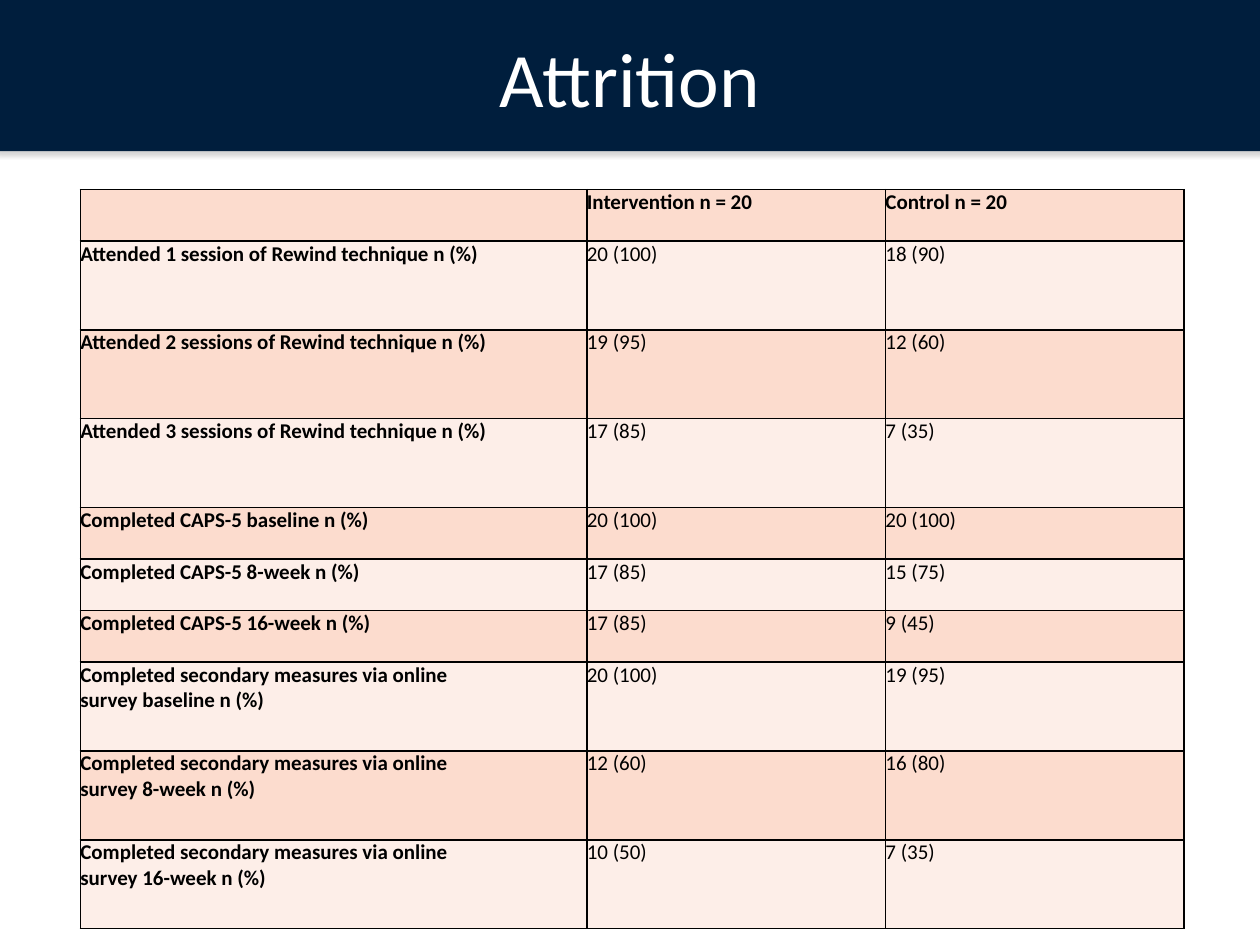
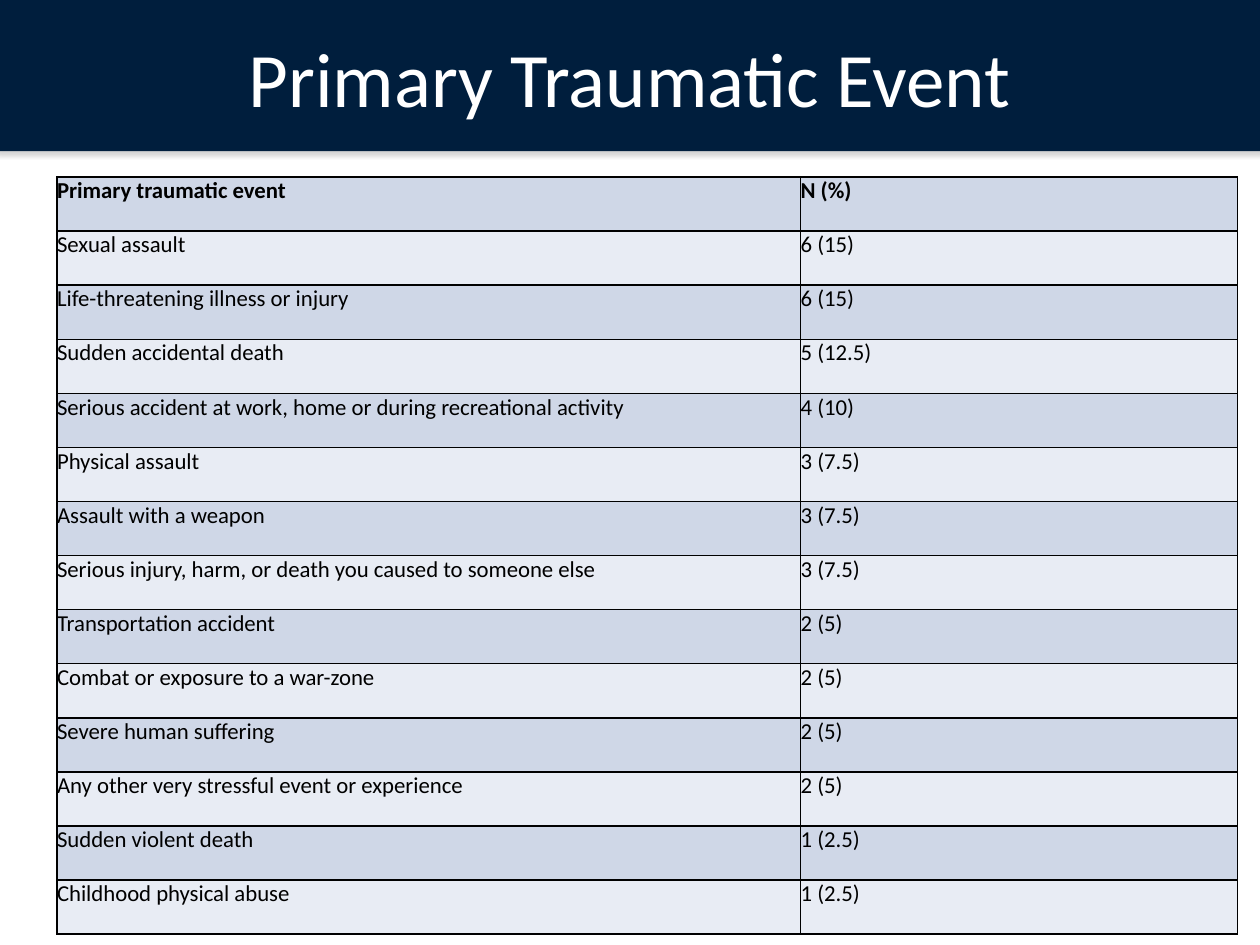
from lxml import etree
from pptx import Presentation
from pptx.dml.color import RGBColor
from pptx.enum import shapes, text
from pptx.oxml import parse_xml
from pptx.oxml.ns import nsdecls, qn
from pptx.util import Cm, Pt

NAVY = RGBColor(0x00, 0x1E, 0x3D)
WHITE = RGBColor(0xFF, 0xFF, 0xFF)
BLACK = RGBColor(0x00, 0x00, 0x00)
PEACH_BANDS = (RGBColor(0xFC, 0xDC, 0xCE), RGBColor(0xFD, 0xEE, 0xE8))
BLUE_BANDS = (RGBColor(0xCF, 0xD7, 0xE7), RGBColor(0xE8, 0xEC, 0xF4))
FONT = "Calibri"
SHORT_ROW, TALL_ROW = Cm(1.04), Cm(1.79)
EVENT_ROW = Cm(1.09)
LABEL_MARGIN = Cm(1.85)

ATTRITION = [
    ("", "Intervention n = 20", "Control n = 20"),
    ("Attended 1 session of Rewind technique n (%)", "20 (100)", "18 (90)"),
    ("Attended 2 sessions of Rewind technique n (%)", "19 (95)", "12 (60)"),
    ("Attended 3 sessions of Rewind technique n (%)", "17 (85)", "7 (35)"),
    ("Completed CAPS-5 baseline n (%)", "20 (100)", "20 (100)"),
    ("Completed CAPS-5 8-week n (%)", "17 (85)", "15 (75)"),
    ("Completed CAPS-5 16-week n (%)", "17 (85)", "9 (45)"),
    ("Completed secondary measures via online survey baseline n (%)", "20 (100)", "19 (95)"),
    ("Completed secondary measures via online survey 8-week n (%)", "12 (60)", "16 (80)"),
    ("Completed secondary measures via online survey 16-week n (%)", "10 (50)", "7 (35)"),
]

EVENTS = [
    ("Primary traumatic event", "N (%)"),
    ("Sexual assault", "6 (15)"),
    ("Life-threatening illness or injury", "6 (15)"),
    ("Sudden accidental death", "5 (12.5)"),
    ("Serious accident at work, home or during recreational activity", "4 (10)"),
    ("Physical assault", "3 (7.5)"),
    ("Assault with a weapon", "3 (7.5)"),
    ("Serious injury, harm, or death you caused to someone else", "3 (7.5)"),
    ("Transportation accident", "2 (5)"),
    ("Combat or exposure to a war-zone", "2 (5)"),
    ("Severe human suffering", "2 (5)"),
    ("Any other very stressful event or experience", "2 (5)"),
    ("Sudden violent death", "1 (2.5)"),
    ("Childhood physical abuse", "1 (2.5)"),
]


def add_run(para, words, size, color, bold=False):
    run = para.add_run()
    run.text = words
    run.font.name = FONT
    run.font.size = Pt(size)
    run.font.bold = bold
    run.font.color.rgb = color


def add_header_band(slide):
    """Draw the band and move it to the slide's layout, behind every title."""
    band = slide.shapes.add_shape(shapes.MSO_SHAPE.RECTANGLE,
                                  Cm(-0.08), Cm(-0.03), Cm(25.63), Cm(3.08))
    band.fill.solid()
    band.fill.fore_color.rgb = NAVY
    band.line.fill.background()
    band.shadow.inherit = False
    effects = band.element.spPr.find(qn("a:effectLst"))
    effects.append(parse_xml(
        f'<a:outerShdw {nsdecls("a")} blurRad="{Pt(3)}" dist="{Pt(1.8)}" '
        'dir="5400000" rotWithShape="0"><a:srgbClr val="808080">'
        '<a:alpha val="35000"/></a:srgbClr></a:outerShdw>'))
    slide.slide_layout.shapes.element.insert(2, band.element)


def set_title(slide, words):
    title = slide.shapes.title
    title.left, title.top, title.width, title.height = Cm(1.27), Cm(-0.05), Cm(22.86), Cm(3.18)
    frame = title.text_frame
    frame.auto_size = text.MSO_AUTO_SIZE.NONE
    frame.word_wrap = True
    frame.vertical_anchor = text.MSO_ANCHOR.MIDDLE
    frame.margin_left = frame.margin_right = frame.margin_top = frame.margin_bottom = Cm(0.13)
    para = frame.paragraphs[0]
    para.alignment = text.PP_ALIGN.CENTER
    add_run(para, words, 44, WHITE)


def outline_cell(cell):
    properties = cell._tc.get_or_add_tcPr()
    for position, side in enumerate(("lnL", "lnR", "lnT", "lnB")):
        line = etree.Element(qn(f"a:{side}"), w=str(Pt(1)))
        fill = etree.SubElement(line, qn("a:solidFill"))
        etree.SubElement(fill, qn("a:srgbClr"), val=str(BLACK))
        properties.insert(position, line)


def add_banded_table(slide, rows, left, top, widths, heights, bands, size, bold_labels=False):
    frame = slide.shapes.add_table(len(rows), len(widths), left, top, sum(widths), sum(heights))
    table = frame.table
    table.first_row = table.horz_banding = False
    for column, width in zip(table.columns, widths):
        column.width = width
    for row_index, (values, height) in enumerate(zip(rows, heights)):
        table.rows[row_index].height = height
        for column_index, words in enumerate(values):
            is_label = column_index == 0
            cell = table.cell(row_index, column_index)
            cell.margin_left = cell.margin_top = cell.margin_bottom = 0
            cell.margin_right = LABEL_MARGIN if is_label else 0
            cell.fill.solid()
            cell.fill.fore_color.rgb = bands[row_index % 2]
            outline_cell(cell)
            if words:
                bold = row_index == 0 or (bold_labels and is_label)
                add_run(cell.text_frame.paragraphs[0], words, size, BLACK, bold)


def main():
    deck = Presentation()
    deck.slide_width, deck.slide_height = Cm(25.4), Cm(19.05)
    title_only = deck.slide_layouts[5]

    attrition = deck.slides.add_slide(title_only)
    add_header_band(attrition)
    set_title(attrition, "Attrition")
    heights = [SHORT_ROW] + [TALL_ROW] * 3 + [SHORT_ROW] * 3 + [TALL_ROW] * 3
    add_banded_table(attrition, ATTRITION, Cm(1.62), Cm(3.82),
                     [Cm(10.21), Cm(6.02), Cm(6.02)], heights, PEACH_BANDS, 12, bold_labels=True)

    events = deck.slides.add_slide(title_only)
    set_title(events, "Primary Traumatic Event")
    add_banded_table(events, EVENTS, Cm(1.15), Cm(3.57), [Cm(14.99), Cm(8.81)],
                     [EVENT_ROW] * len(EVENTS), BLUE_BANDS, 13)

    deck.save("out.pptx")


if __name__ == "__main__":
    main()
